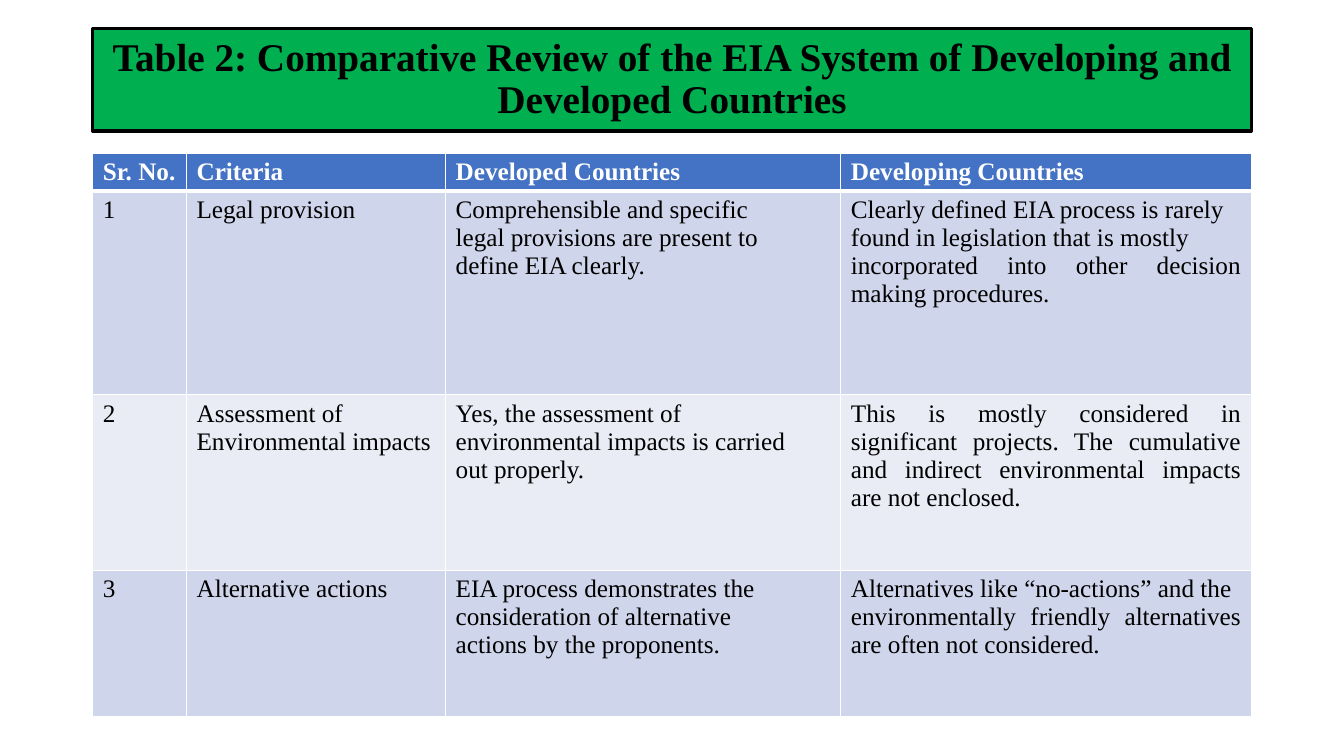
from dataclasses import dataclass

from lxml.etree import SubElement
from pptx import Presentation
from pptx.dml.color import RGBColor
from pptx.enum.text import MSO_ANCHOR, MSO_AUTO_SIZE, PP_ALIGN
from pptx.oxml.ns import qn
from pptx.util import Inches, Pt

TITLE = ("Table 2: Comparative Review of the EIA System of Developing "
         "and Developed Countries")
HEADER = ["Sr. No.", "Criteria", "Developed Countries", "Developing Countries"]
# Each line of a cell is a paragraph.
CRITERIA = [
    ["1",
     "Legal provision",
     "Comprehensible and specific\n"
     "legal provisions are present to\n"
     "define EIA clearly.",
     "Clearly defined EIA process is rarely\n"
     "found in legislation that is mostly\n"
     "incorporated into other decision making procedures."],
    ["2",
     "Assessment of\nEnvironmental impacts",
     "Yes, the assessment of\n"
     "environmental impacts is carried\n"
     "out properly.",
     "This is mostly considered in significant projects. The cumulative "
     "and indirect environmental impacts are not enclosed."],
    ["3",
     "Alternative actions",
     "EIA process demonstrates the\n"
     "consideration of alternative\n"
     "actions by the proponents.",
     "Alternatives like “no-actions” and the\n"
     "environmentally friendly alternatives are often not considered."],
]
COLUMN_WIDTHS = [0.93, 2.57, 3.92, 4.07]
ROW_HEIGHTS = [0.37, 2.02, 1.74, 1.45]
LEFT, WIDTH = 0.92, 11.49
TITLE_TOP, TITLE_HEIGHT = 0.28, 1.02
TABLE_TOP = 1.52


@dataclass(frozen=True)
class Theme:
    font: str = "Times New Roman"
    title_size: int = 28
    table_size: int = 18
    ink: str = "000000"
    paper: str = "FFFFFF"
    title_fill: str = "00B050"
    header_fill: str = "4472C4"
    bands: tuple = ("CFD5EA", "E9EBF5")


THEME = Theme()


def set_font(para, size, color, bold):
    font = para.font
    font.name, font.size, font.bold = THEME.font, Pt(size), bold
    font.color.rgb = RGBColor.from_string(color)


def paint(fill, color):
    fill.solid()
    fill.fore_color.rgb = RGBColor.from_string(color)


def set_borders(cell, widths):
    """Draw white cell borders; widths maps a side (L, R, T, B) to points."""
    properties = cell._tc.get_or_add_tcPr()
    for side, points in widths.items():
        line = SubElement(properties, qn(f"a:ln{side}"), w=str(Pt(points)))
        solid = SubElement(line, qn("a:solidFill"))
        SubElement(solid, qn("a:srgbClr"), val=THEME.paper)


def add_title(slide):
    box = slide.shapes.title
    box.left, box.top = Inches(LEFT), Inches(TITLE_TOP)
    box.width, box.height = Inches(WIDTH), Inches(TITLE_HEIGHT)
    paint(box.fill, THEME.title_fill)
    paint(box.line.fill, THEME.ink)
    box.line.width = Pt(2.25)
    frame = box.text_frame
    frame.text = TITLE
    frame.word_wrap = True
    frame.auto_size = MSO_AUTO_SIZE.NONE
    frame.vertical_anchor = MSO_ANCHOR.MIDDLE
    para = frame.paragraphs[0]
    para.alignment = PP_ALIGN.CENTER
    para.line_spacing = 0.9
    set_font(para, THEME.title_size, THEME.ink, True)


def add_comparison(slide):
    rows = [HEADER] + CRITERIA
    table = slide.shapes.add_table(
        len(rows), len(HEADER), Inches(LEFT), Inches(TABLE_TOP),
        Inches(WIDTH), Inches(sum(ROW_HEIGHTS))).table
    for column, width in zip(table.columns, COLUMN_WIDTHS):
        column.width = Inches(width)
    for row, height in zip(table.rows, ROW_HEIGHTS):
        row.height = Inches(height)
    for r, texts in enumerate(rows):
        is_header = r == 0
        fill = THEME.header_fill if is_header else THEME.bands[(r - 1) % 2]
        color = THEME.paper if is_header else THEME.ink
        borders = {"L": 1, "R": 1, "T": 3 if r == 1 else 1,
                   "B": 3 if is_header else 1}
        for c, text in enumerate(texts):
            cell = table.cell(r, c)
            set_borders(cell, borders)
            paint(cell.fill, fill)
            cell.text = text
            for para in cell.text_frame.paragraphs:
                para.alignment = PP_ALIGN.JUSTIFY
                set_font(para, THEME.table_size, color, is_header)


def main():
    deck = Presentation()
    deck.slide_width, deck.slide_height = Inches(13.33), Inches(7.5)
    slide = deck.slides.add_slide(deck.slide_layouts.get_by_name("Title Only"))
    add_title(slide)
    add_comparison(slide)
    deck.save("out.pptx")


if __name__ == "__main__":
    main()
